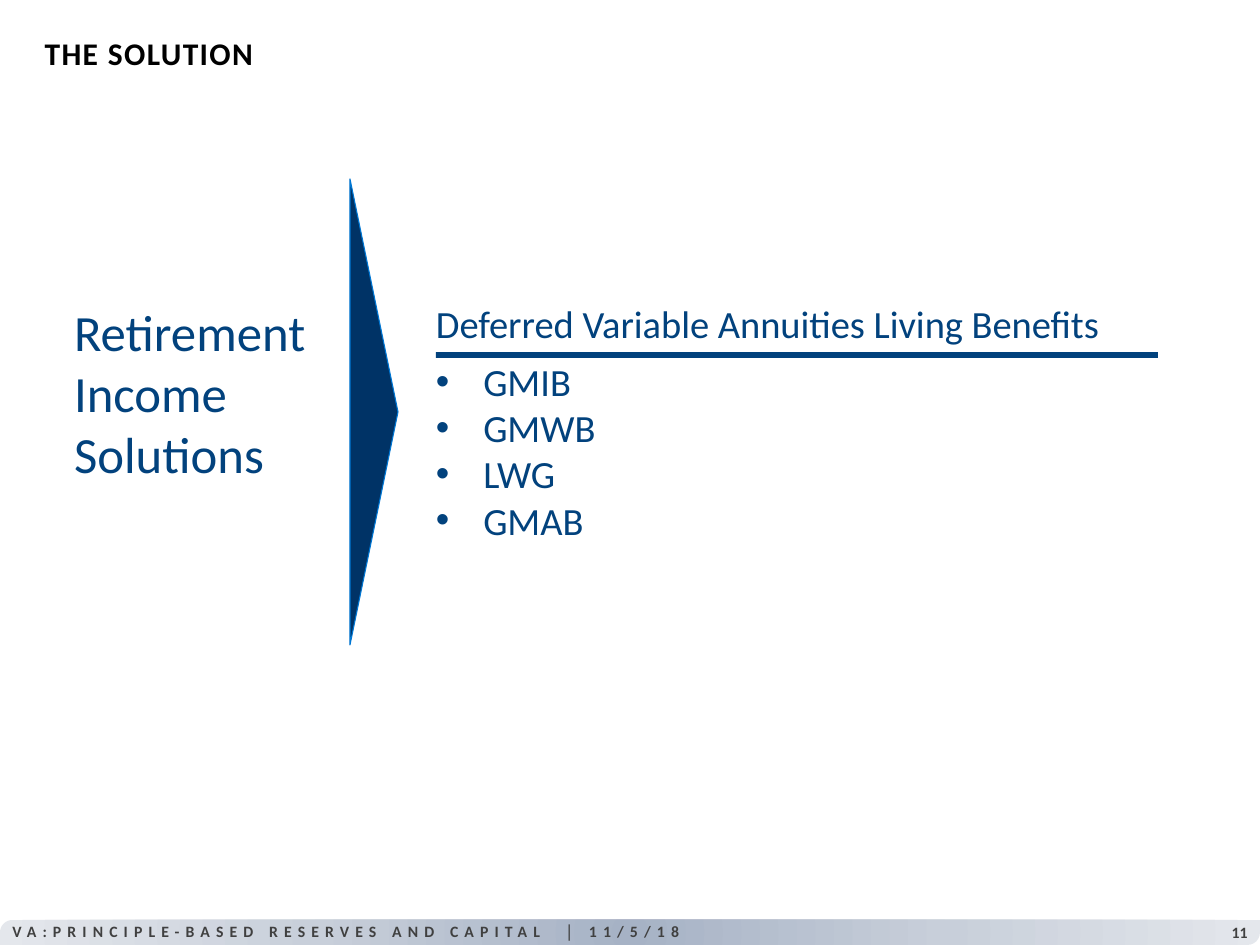
from lxml.etree import SubElement
from pptx import Presentation
from pptx.dml.color import RGBColor
from pptx.enum.shapes import MSO_SHAPE
from pptx.enum.text import MSO_ANCHOR, MSO_AUTO_SIZE, PP_ALIGN
from pptx.oxml.ns import qn
from pptx.util import Emu, Pt

PX = 914400 / 126
FONT = "Calibri"
BLUE = "02427D"
GREY = "404040"


def px(length):
    return Emu(round(length * PX))


def color(hex_value):
    return RGBColor.from_string(hex_value)


def place(shape, left, top, width, height):
    shape.left, shape.top = px(left), px(top)
    shape.width, shape.height = px(width), px(height)


def write(shape, lines, size, hex_value, bold=False, spacing=0,
          align=PP_ALIGN.LEFT, anchor=MSO_ANCHOR.TOP, inset=True):
    """Fill a shape with one styled run per paragraph; spacing is in points."""
    frame = shape.text_frame
    frame.word_wrap = True
    frame.auto_size = MSO_AUTO_SIZE.NONE
    frame.vertical_anchor = anchor
    if not inset:
        frame.margin_left = frame.margin_top = 0
        frame.margin_right = frame.margin_bottom = 0
    for index, line in enumerate(lines):
        para = frame.add_paragraph() if index else frame.paragraphs[0]
        para.alignment = align
        para.space_before = Pt(0)
        span = para.add_run()
        span.text = line
        span.font.name = FONT
        span.font.size = Pt(size)
        span.font.bold = bold
        span.font.color.rgb = color(hex_value)
        if spacing:
            span.font._element.set("spc", str(round(spacing * 100)))


def add_text(page, area, lines, size, hex_value, **style):
    box = page.shapes.add_textbox(*map(px, area))
    write(box, lines, size, hex_value, **style)


def set_radial_gradient(shape, stops):
    """Spread (percent, colour) stops outwards from the middle of a shape."""
    properties = shape._element.spPr
    gradient = properties.makeelement(qn("a:gradFill"), {"rotWithShape": "1"})
    stop_list = SubElement(gradient, qn("a:gsLst"))
    for percent, hex_value in stops:
        stop = SubElement(stop_list, qn("a:gs"), pos=str(percent * 1000))
        SubElement(stop, qn("a:srgbClr"), val=hex_value)
    circle = SubElement(gradient, qn("a:path"), path="circle")
    SubElement(circle, qn("a:fillToRect"),
               dict.fromkeys("ltrb", "50000"))
    properties.find(qn("a:prstGeom")).addnext(gradient)


def add_footer(page):
    band = page.shapes.add_shape(
        MSO_SHAPE.ROUND_2_DIAG_RECTANGLE, *map(px, (0, 920, 1260, 25)))
    band.adjustments[0], band.adjustments[1] = 0.5, 0
    band.shadow.inherit = False
    band.line.fill.background()
    set_radial_gradient(band, [(0, "A6B2C5"), (50, "C8CFDA"), (100, "E4E7EC")])
    add_text(page, (1207, 917, 53, 31), ["11"], 9, GREY, bold=True,
             align=PP_ALIGN.RIGHT)
    add_text(page, (0, 916, 1124, 31),
             ["VA:PRINCIPLE-BASED RESERVES AND CAPITAL  │ 11/5/18"],
             9, GREY, bold=True, spacing=3.5)


def add_pointer(page, left, top, width, height):
    """Draw a tall triangle that points right."""
    builder = page.shapes.build_freeform(left, top, scale=PX)
    builder.add_line_segments(
        [(left + width, top + height / 2), (left, top + height)], close=True)
    pointer = builder.convert_to_shape()
    pointer.shadow.inherit = False
    pointer.fill.solid()
    pointer.fill.fore_color.rgb = color("003366")
    pointer.line.color.rgb = color("0077D4")
    pointer.line.width = Pt(0.63)


def add_rule(page, left, top, width, height):
    rule = page.shapes.add_shape(
        MSO_SHAPE.RECTANGLE, *map(px, (left, top, width, height)))
    rule.shadow.inherit = False
    rule.fill.solid()
    rule.fill.fore_color.rgb = color(BLUE)
    rule.line.fill.background()


def main():
    deck = Presentation()
    deck.slide_width, deck.slide_height = px(1260), px(945)
    page = deck.slides.add_slide(deck.slide_layouts[1])
    title, benefits = page.placeholders

    add_footer(page)
    place(title, 32, 0, 1228, 105)
    write(title, ["THE SOLUTION"], 18, "000000", bold=True, spacing=0.8,
          anchor=MSO_ANCHOR.MIDDLE)

    add_text(page, (74, 301, 261, 184), ["Retirement", "Income", "Solutions"],
             29, BLUE, inset=False)
    add_pointer(page, 350, 179, 48, 466)
    add_text(page, (436, 300, 727, 47),
             ["Deferred Variable Annuities Living Benefits"],
             22, BLUE, inset=False)
    add_rule(page, 436, 352, 722, 6)
    place(benefits, 436, 358, 161, 186)
    write(benefits, ["GMIB", "GMWB", "LWG", "GMAB"], 22, BLUE, inset=False)

    deck.save("out.pptx")


if __name__ == "__main__":
    main()
